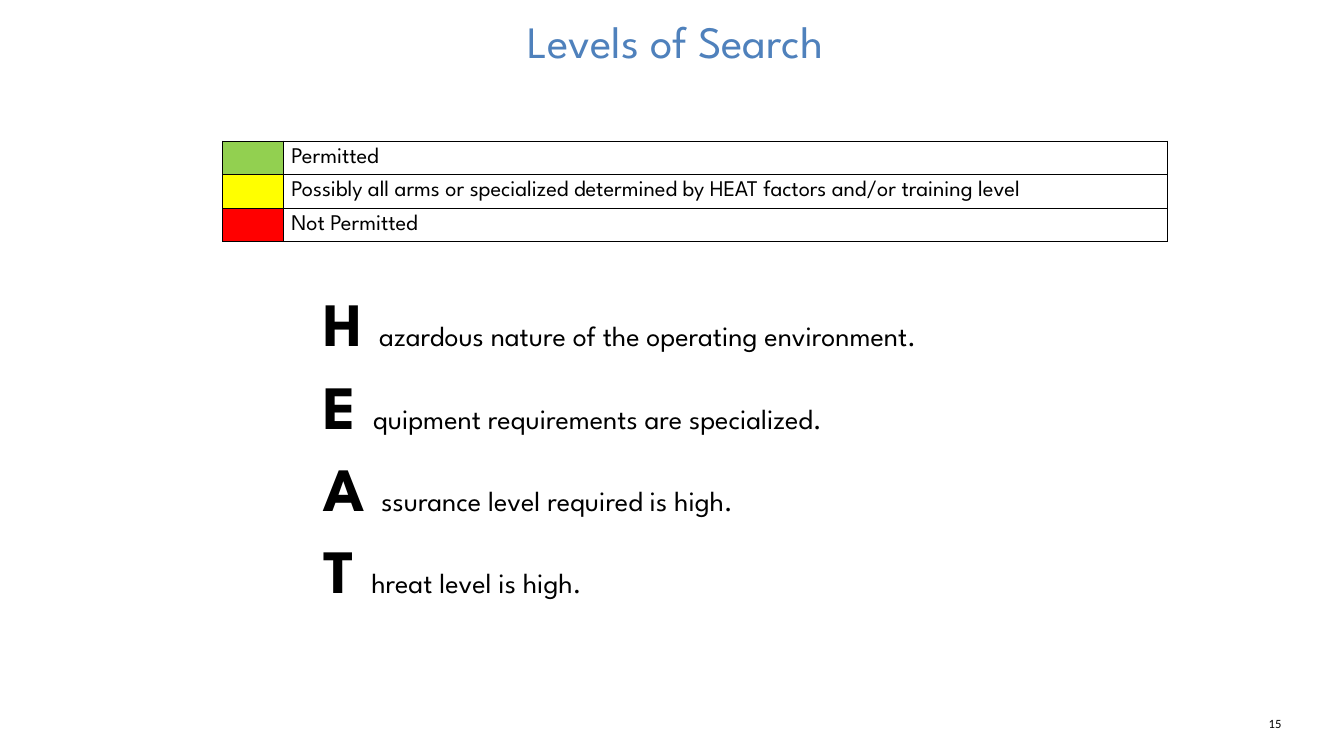
from dataclasses import dataclass

from pptx import Presentation
from pptx.dml.color import RGBColor
from pptx.enum.text import MSO_ANCHOR, MSO_AUTO_SIZE, PP_ALIGN
from pptx.oxml import parse_xml
from pptx.oxml.ns import nsdecls
from pptx.util import Inches, Pt


@dataclass(frozen=True)
class Theme:
    font: str = "League Spartan"
    number_font: str = "Calibri"
    ink: str = "000000"
    heading: str = "4F81BC"
    permitted: str = "92D050"
    possible: str = "FFFF00"
    forbidden: str = "FF0000"
    title_size: int = 32
    initial_size: int = 44
    factor_size: int = 20
    legend_size: int = 16
    number_size: int = 9


theme = Theme()
deck = Presentation()
deck.slide_width, deck.slide_height = Inches(13.33), Inches(7.5)


def area(left, top, width, height):
    """Turn percentages of the slide's size into lengths."""
    across, down = deck.slide_width / 100, deck.slide_height / 100
    return [round(n) for n in (left * across, top * down, width * across, height * down)]


def style(run, size, color=theme.ink, font=theme.font, bold=False):
    run.font.name = font
    run.font.size = Pt(size)
    run.font.bold = bold
    run.font.color.rgb = RGBColor.from_string(color)


slide = deck.slides.add_slide(deck.slide_layouts[1])
title, heat = slide.placeholders
title.left, title.top, title.width, title.height = area(23.25, 1.07, 54, 8.53)
heat.left, heat.top, heat.width, heat.height = area(21.45, 37.07, 60.6, 44.27)

# Title
title.text_frame.text = "Levels of Search"
title.text_frame.auto_size = MSO_AUTO_SIZE.NONE
heading = title.text_frame.paragraphs[0]
heading.alignment = PP_ALIGN.CENTER
style(heading.runs[0], theme.title_size, theme.heading)

# Legend of search levels
levels = [
    (theme.permitted, "Permitted"),
    (theme.possible, "Possibly all arms or specialized determined by HEAT factors and/or training level"),
    (theme.forbidden, "Not Permitted"),
]
legend = slide.shapes.add_table(len(levels), 2, *area(16.58, 18.67, 70.28, 13.33)).table
legend.first_row = legend.horz_banding = False
for column, share in zip(legend.columns, (4.5, 65.78)):
    column.width = round(deck.slide_width * share / 100)

for row, (color, meaning) in zip(legend.rows, levels):
    swatch, label = row.cells
    for cell in row.cells:
        cell.margin_left = cell.margin_right = Inches(0.08)
        cell.margin_top = cell.margin_bottom = 0
        cell.vertical_anchor = MSO_ANCHOR.MIDDLE
        for side in "LRTB":
            cell._tc.get_or_add_tcPr().append(parse_xml(
                f'<a:ln{side} {nsdecls("a")} w="{Pt(1)}"><a:solidFill>'
                f'<a:srgbClr val="{theme.ink}"/></a:solidFill></a:ln{side}>'))
    swatch.fill.solid()
    swatch.fill.fore_color.rgb = RGBColor.from_string(color)
    label.fill.background()
    label.text_frame.text = meaning
    entry = label.text_frame.paragraphs[0]
    entry.space_after = Pt(6)
    style(entry.runs[0], theme.legend_size)

# HEAT factors
factors = [
    "H azardous nature of the operating environment.",
    "E quipment requirements are specialized.",
    "A ssurance level required is high.",
    "T hreat level is high.",
]
heat.text_frame.auto_size = MSO_AUTO_SIZE.NONE
heat.text_frame.vertical_anchor = MSO_ANCHOR.TOP
for index, factor in enumerate(factors):
    line = heat.text_frame.paragraphs[0] if index == 0 else heat.text_frame.add_paragraph()
    properties = line._p.get_or_add_pPr()
    properties.set("marL", str(Inches(0.25)))
    properties.set("indent", "0")
    properties.append(parse_xml(f'<a:buNone {nsdecls("a")}/>'))
    line.space_before, line.space_after = Pt(0), Pt(6)
    initial, rest = line.add_run(), line.add_run()
    initial.text, rest.text = factor[:2], factor[2:]
    style(initial, theme.initial_size, bold=True)
    style(rest, theme.factor_size)

# Slide number
number = slide.shapes.add_textbox(*area(90.6, 94, 5.48, 3.33)).text_frame
number.word_wrap = True
number.text = "15"
number.paragraphs[0].alignment = PP_ALIGN.RIGHT
style(number.paragraphs[0].runs[0], theme.number_size, font=theme.number_font)

deck.save("out.pptx")
